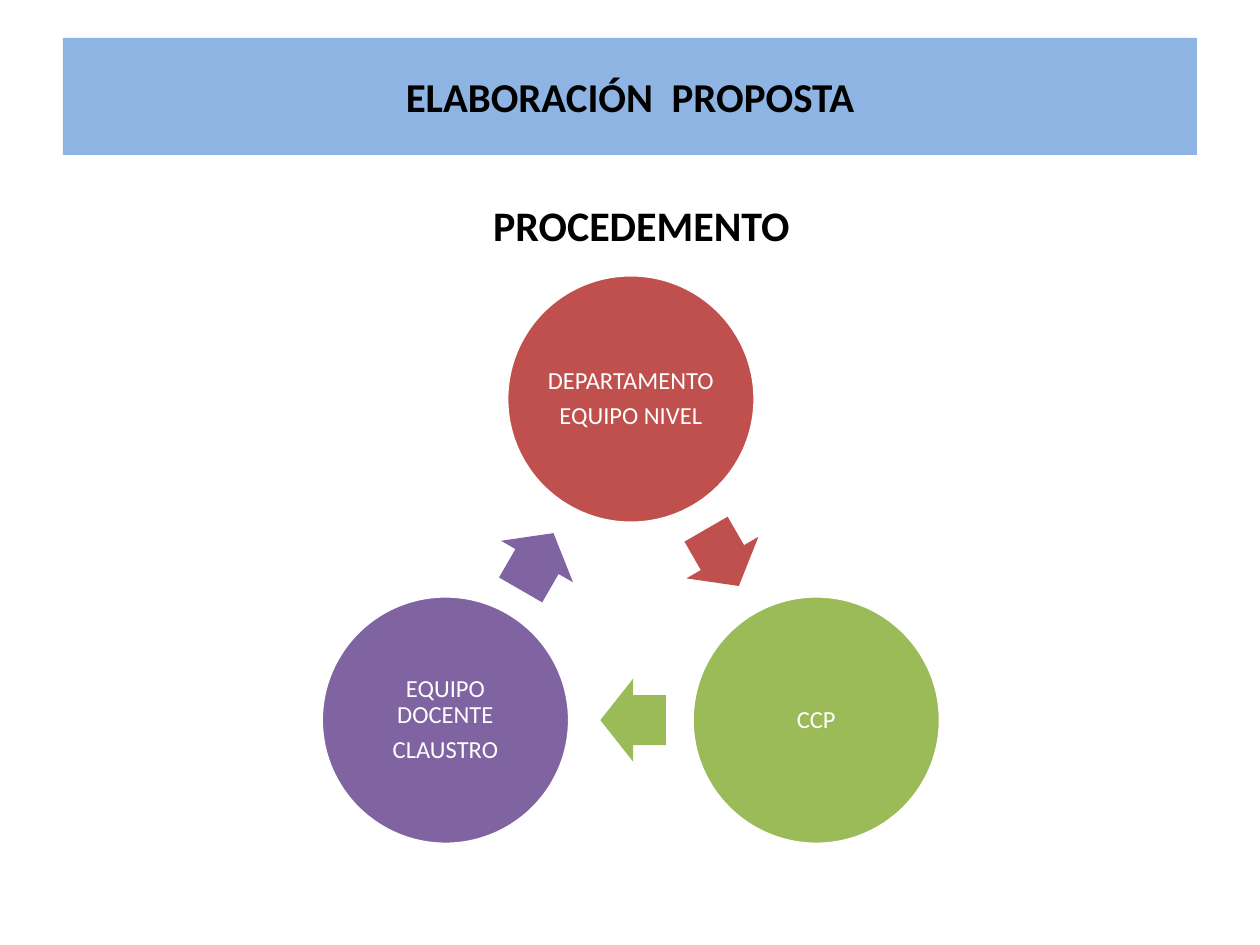
from math import cos, radians, sin

from pptx import Presentation
from pptx.dml.color import RGBColor
from pptx.enum.shapes import MSO_SHAPE as Preset
from pptx.enum.text import MSO_ANCHOR as Anchor, PP_ALIGN as Align
from pptx.util import Pt

FONT = "Calibri"
STAGES = [
    (["DEPARTAMENTO", "EQUIPO NIVEL"], "C0504D"),
    (["CCP"], "9BBB59"),
    (["EQUIPO DOCENTE", "CLAUSTRO"], "8064A2"),
]


def color(value):
    return RGBColor.from_string(value)


def fill(shape, value):
    shape.fill.solid()
    shape.fill.fore_color.rgb = color(value)


def set_format(target, values):
    for name, value in values.items():
        setattr(target, name, value)


def write(shape, lines, font_color, font, paragraph_format, frame_format):
    frame = shape.text_frame
    set_format(frame, {"word_wrap": True, "vertical_anchor": Anchor.MIDDLE, **frame_format})
    frame.text = "\n".join(lines)
    for paragraph in frame.paragraphs:
        set_format(paragraph, {"alignment": Align.CENTER, **paragraph_format})
        for run in paragraph.runs:
            set_format(run.font, {"name": FONT, **font})
            run.font.color.rgb = color(font_color)


def add_preset(slide, preset, box, fill_color):
    shape = slide.shapes.add_shape(preset, *map(Pt, box))
    shape.shadow.inherit = False
    fill(shape, fill_color)
    shape.line.fill.background()
    return shape


def add_banner(slide, box):
    banner = add_preset(slide, Preset.RECTANGLE, box, "8EB4E3")
    write(banner, ["ELABORACIÓN  PROPOSTA"], "000000", {"size": Pt(23.4), "bold": True}, {}, {})


def set_title(slide, box):
    title = slide.shapes.title
    set_format(title, dict(zip(("left", "top", "width", "height"), map(Pt, box))))
    fill(title, "FFFFFF")
    write(title, ["PROCEDEMENTO"], "000000", {"size": Pt(24), "bold": True}, {}, {})


def add_cycle(slide, box):
    left, top, width, height = box
    diameter = 142
    arrow_width, arrow_height, arrow_setback = 37.5, 47.5, 1.3
    radius = (height - diameter) / 1.5
    center_x, center_y = left + width / 2, top + diameter / 2 + radius
    step = 360 / len(STAGES)
    insets = dict.fromkeys(("margin_left", "margin_top", "margin_right", "margin_bottom"), Pt(1.4))

    for index, (lines, stage_color) in enumerate(STAGES):
        angle = radians(index * step - 90)
        x, y = center_x + radius * cos(angle), center_y + radius * sin(angle)
        circle_box = (x - diameter / 2, y - diameter / 2, diameter, diameter)
        circle = add_preset(slide, Preset.OVAL, circle_box, stage_color)
        circle.line.color.rgb = color("FFFFFF")
        circle.line.width = Pt(2)
        write(circle, lines, "FFFFFF", {"size": Pt(14)},
              {"line_spacing": 0.9, "space_after": Pt(4.9)}, insets)

        rotation = (index + 0.5) * step
        middle, heading = radians(rotation - 90), radians(rotation)
        x = center_x + radius / 2 * cos(middle) - arrow_setback * cos(heading)
        y = center_y + radius / 2 * sin(middle) - arrow_setback * sin(heading)
        arrow_box = (x - arrow_width / 2, y - arrow_height / 2, arrow_width, arrow_height)
        arrow = add_preset(slide, Preset.RIGHT_ARROW, arrow_box, stage_color)
        arrow.adjustments[0] = 0.6
        arrow.rotation = rotation


def main():
    presentation = Presentation()
    presentation.slide_width, presentation.slide_height = Pt(720), Pt(540)
    slide = presentation.slides.add_slide(presentation.slide_layouts[5])
    set_title(slide, (42.5, 100, 648, 57))
    add_cycle(slide, (183.5, 157, 354, 325.5))
    add_banner(slide, (36, 21.6, 648, 67))
    presentation.save("out.pptx")


if __name__ == "__main__":
    main()
